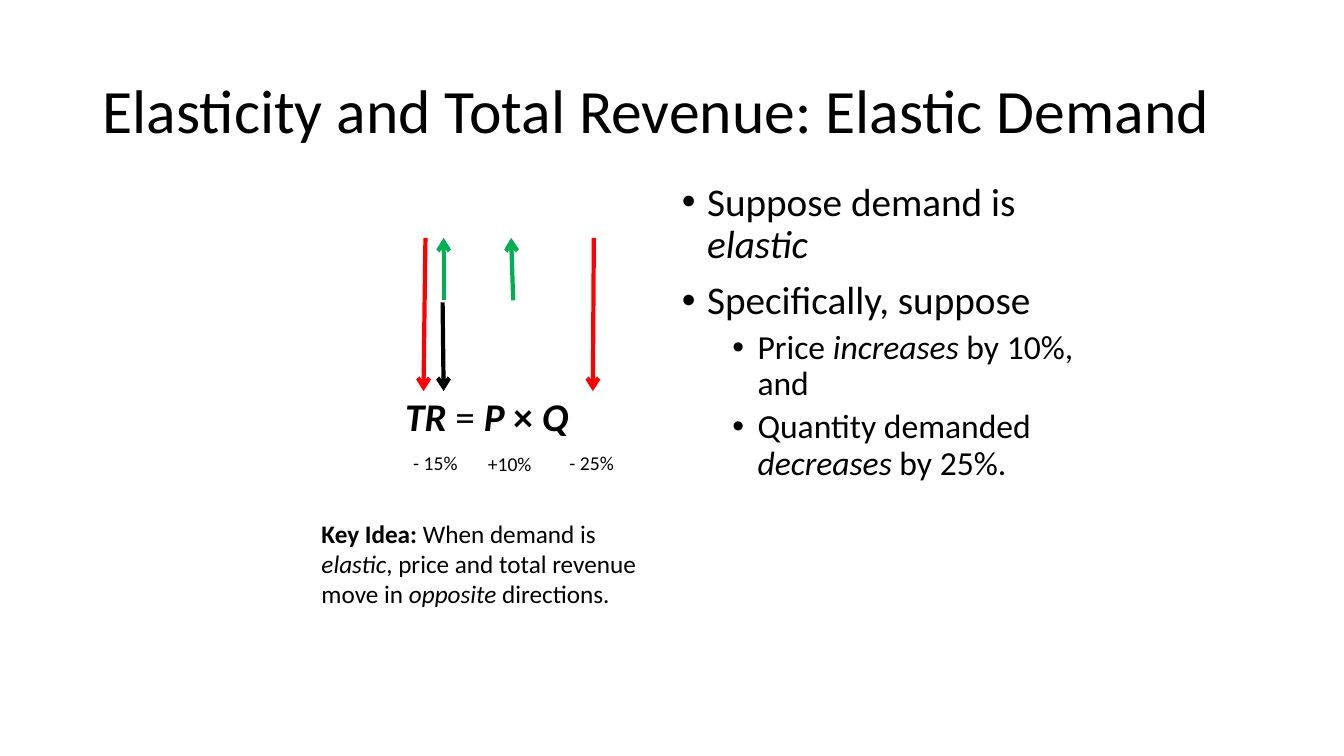
from lxml import etree
from pptx import Presentation
from pptx.dml.color import RGBColor
from pptx.enum.shapes import MSO_CONNECTOR
from pptx.enum.text import MSO_ANCHOR
from pptx.oxml.ns import qn
from pptx.util import Inches, Pt

LINE = MSO_CONNECTOR.STRAIGHT
TOP, MID = MSO_ANCHOR.TOP, MSO_ANCHOR.MIDDLE
FONT = "Calibri"
HEX = {"black": "000000", "green": "00B050", "red": "FF0000"}
WIDE, HIGH = 13.33, 7.5

# A run is (text, style), where style holds "b" for bold and "i" for italic.
TITLE = [("Elasticity and Total Revenue: Elastic Demand", "")]
BULLETS = [
    (0, [("Suppose demand is ", ""), ("elastic", "i")]),
    (0, [("Specifically, suppose", "")]),
    (1, [("Price ", ""), ("increases", "i"), (" by 10%, and", "")]),
    (1, [("Quantity demanded ", ""), ("decreases", "i"), (" by 25%.", "")]),
]
FORMULA = [("TR", "bi"), (" = ", ""), ("P ", "bi"), ("× ", "b"), ("Q", "bi")]
KEY = [("Key Idea: ", "b"), ("When demand is ", ""), ("elastic", "i"),
       (", price and total revenue move in ", ""), ("opposite", "i"),
       (" directions.", "")]
# Text, left, top, width
CHANGES = [("+10%", 4.74, 4.43, 0.74), ("- 25%", 5.55, 4.42, 0.77),
           ("- 15%", 4, 4.42, 0.74)]

# Levels shared by the arrows: upper edge, middle, lower edge
UPPER, CENTER, LOWER = 2.36, 2.98, 3.88
# Colour, start x, start y, end x, end y
ARROWS = [
    ("green", 5.09, CENTER, 5.07, UPPER),
    ("green", 4.4, CENTER, 4.4, UPPER),
    ("red", 5.89, UPPER, 5.88, LOWER),
    ("red", 4.22, UPPER, 4.2, LOWER),
    ("black", 4.39, CENTER + 0.02, 4.4, LOWER),
]
# Size, space before, left margin for each bullet level
LEVELS = [(28, 10, 0.25), (24, 5, 0.75)]


def rgb(name):
    return RGBColor.from_string(HEX[name])


def add_box(slide, left, top, width, height, anchor=TOP):
    box = slide.shapes.add_textbox(*map(Inches, (left, top, width, height)))
    frame = box.text_frame
    frame.word_wrap = True
    frame.vertical_anchor = anchor
    return frame


def add_runs(para, runs, size):
    for text, style in runs:
        run = para.add_run()
        run.text = text
        font = run.font
        font.name, font.size = FONT, Pt(size)
        font.bold, font.italic = "b" in style, "i" in style
        font.color.rgb = rgb("black")


def add_list(frame, items):
    for num, (level, runs) in enumerate(items):
        para = frame.add_paragraph() if num else frame.paragraphs[0]
        size, space, left = LEVELS[level]
        para.level = level
        para.line_spacing = 0.9
        para.space_before = Pt(space if num else 0)
        props = para._p.get_or_add_pPr()
        props.set("marL", str(Inches(left)))
        props.set("indent", str(Inches(-0.25)))
        etree.SubElement(props, qn("a:buFont")).set("typeface", "Arial")
        etree.SubElement(props, qn("a:buChar")).set("char", "•")
        add_runs(para, runs, size)


def add_arrow(slide, color, *ends):
    arrow = slide.shapes.add_connector(LINE, *map(Inches, ends))
    arrow.line.color.rgb = rgb(color)
    arrow.line.width = Pt(3)
    tip = etree.SubElement(arrow.line._get_or_add_ln(), qn("a:tailEnd"))
    tip.set("type", "arrow")
    etree.SubElement(arrow._element.spPr, qn("a:effectLst"))


def main():
    deck = Presentation()
    deck.slide_width, deck.slide_height = Inches(WIDE), Inches(HIGH)
    slide = deck.slides.add_slide(deck.slide_layouts[6])

    para = add_box(slide, 0.92, 0.4, 11.5, 1.45, MID).paragraphs[0]
    para.line_spacing = 0.9
    add_runs(para, TITLE, 44)
    add_list(add_box(slide, WIDE / 2, 1.76, 4.5, 3.28), BULLETS)
    add_runs(add_box(slide, 3.92, 3.84, 2.25, 0.57).paragraphs[0], FORMULA, 28)
    for arrow in ARROWS:
        add_arrow(slide, *arrow)
    for text, left, top, width in CHANGES:
        frame = add_box(slide, left, top, width, 0.34)
        add_runs(frame.paragraphs[0], [(text, "")], 14)
    add_runs(add_box(slide, 3.09, 5.09, 3.58, 1.01).paragraphs[0], KEY, 18)
    deck.save("out.pptx")


if __name__ == "__main__":
    main()
